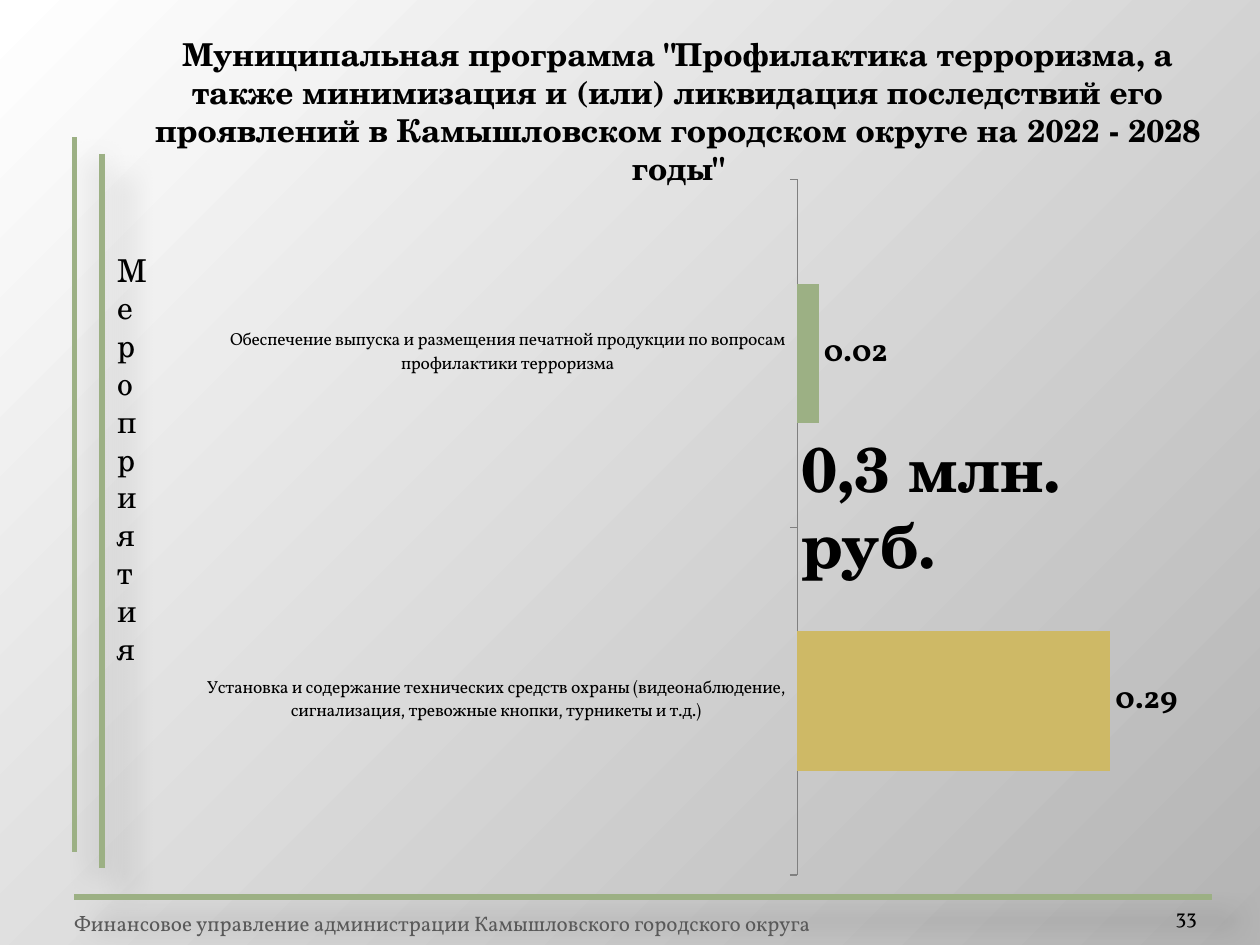
"""Builds the slide on the municipal anti-terrorism programme with its cost chart."""
from typing import NamedTuple

from lxml import etree
from pptx import Presentation
from pptx.chart.data import CategoryChartData
from pptx.dml.color import RGBColor
from pptx.enum.chart import XL_CHART_TYPE, XL_LABEL_POSITION, XL_TICK_MARK
from pptx.enum.shapes import MSO_CONNECTOR
from pptx.enum.text import MSO_ANCHOR, MSO_AUTO_SIZE, PP_ALIGN
from pptx.oxml import parse_xml
from pptx.oxml.ns import qn
from pptx.util import Pt

BAR = XL_CHART_TYPE.BAR_CLUSTERED
OUTSIDE_END = XL_LABEL_POSITION.OUTSIDE_END
TICK_OUTSIDE = XL_TICK_MARK.OUTSIDE
STRAIGHT = MSO_CONNECTOR.STRAIGHT
TOP, BOTTOM = MSO_ANCHOR.TOP, MSO_ANCHOR.BOTTOM
GROW, FIXED = MSO_AUTO_SIZE.SHAPE_TO_FIT_TEXT, MSO_AUTO_SIZE.NONE
LEFT, CENTER, RIGHT = PP_ALIGN.LEFT, PP_ALIGN.CENTER, PP_ALIGN.RIGHT

COLORS = {
    "light": "FFFFFF",
    "dark": "B4B4B4",
    "green": "9CB084",
    "gold": "CEB966",
    "footer": "595959",
    "axis": "808080",
    "text": "000000",
}
HEADING_FONT = "TeX Gyre Schola"
BODY_FONT = "Vollkorn"
VALUE_FORMAT = "#,##0.00"
DRAWING = "http://schemas.openxmlformats.org/drawingml/2006/main"
CHART = "http://schemas.openxmlformats.org/drawingml/2006/chart"


class Rule(NamedTuple):
    x1: float
    y1: float
    x2: float
    y2: float


class Activity(NamedTuple):
    name: str
    cost: float
    color: str


RULES = [
    Rule(42.5, 78.5, 42.5, 486.7),
    Rule(58.3, 87.8, 58.3, 496),
    Rule(42.5, 512.6, 692.6, 512.6),
]
ACTIVITIES = [
    Activity(
        "Установка и содержание технических средств охраны (видеонаблюдение, "
        "сигнализация, тревожные кнопки, турникеты и т.д.)", 0.29, "gold"),
    Activity(
        "Обеспечение выпуска и размещения печатной продукции по вопросам "
        "профилактики терроризма", 0.02, "green"),
]
PLOT_AREA = {"x": 0.61, "y": 0.02, "w": 0.37, "h": 0.96}


def color(name: str) -> RGBColor:
    return RGBColor.from_string(COLORS[name])


def paint_background(page) -> None:
    fill = page.background.fill
    fill.gradient()
    for stop, name in zip(fill.gradient_stops, ("light", "dark")):
        stop.color.rgb = color(name)
    linear = next(page.element.iter(qn("a:lin")))
    linear.getparent().replace(linear, parse_xml(
        f'<a:path xmlns:a="{DRAWING}" path="circle">'
        '<a:fillToRect r="100000" b="100000"/></a:path>'))


def draw_rule(page, rule: Rule) -> None:
    line = page.shapes.add_connector(STRAIGHT, *map(Pt, rule))
    line.line.color.rgb = color("green")
    line.line.width = Pt(3)
    line.element.spPr.append(parse_xml(
        f'<a:effectLst xmlns:a="{DRAWING}">'
        f'<a:outerShdw blurRad="{Pt(15)}" dist="{Pt(18)}" dir="2700000" algn="tl" rotWithShape="0">'
        f'<a:srgbClr val="{COLORS["text"]}"><a:alpha val="26000"/></a:srgbClr>'
        '</a:outerShdw></a:effectLst>'))


def write(box, text: str, *, size: float, font: str = HEADING_FONT, ink: str = "text",
          bold: bool = False, align=LEFT, anchor=TOP, fit=GROW) -> None:
    frame = box.text_frame
    frame.word_wrap = True
    frame.auto_size = fit
    frame.vertical_anchor = anchor
    para = frame.paragraphs[0]
    para.alignment = align
    span = para.add_run()
    span.text = text
    span.font.name = font
    span.font.size = Pt(size)
    span.font.bold = bold
    span.font.color.rgb = color(ink)


def add_box(page, left: float, top: float, width: float, height: float):
    return page.shapes.add_textbox(Pt(left), Pt(top), Pt(width), Pt(height))


def add_title(page) -> None:
    title = page.shapes.title
    title.left, title.top, title.width, title.height = Pt(78.5), Pt(16.6), Pt(617.8), Pt(72.7)
    write(title, 'Муниципальная программа "Профилактика терроризма, а также минимизация '
          'и (или) ликвидация последствий его проявлений в Камышловском городском округе '
          'на 2022 - 2028 годы"', size=18, bold=True, align=CENTER)


def set_plot_area(chart) -> None:
    plot_area = chart.element.chart.plotArea
    for old in plot_area.findall(qn("c:layout")):
        plot_area.remove(old)
    layout = etree.Element(qn("c:layout"), nsmap={"c": CHART})
    manual = etree.SubElement(layout, qn("c:manualLayout"))
    settings = {"layoutTarget": "inner", "xMode": "edge", "yMode": "edge", **PLOT_AREA}
    for name, value in settings.items():
        etree.SubElement(manual, qn(f"c:{name}")).set("val", str(value))
    plot_area.insert(0, layout)


def add_cost_chart(page, activities: list[Activity]) -> None:
    data = CategoryChartData(number_format=VALUE_FORMAT)
    data.categories = [activity.name for activity in activities]
    data.add_series("Series 1", [activity.cost for activity in activities])
    chart = page.shapes.add_chart(BAR, Pt(99.4), Pt(94.3), Pt(583.9), Pt(414), data).chart
    chart.has_legend = False
    chart.has_title = False
    chart.font.name = BODY_FONT
    chart.font.size = Pt(10)
    chart.font.color.rgb = color("text")
    set_plot_area(chart)

    costs = chart.value_axis
    costs.minimum_scale, costs.maximum_scale = 0, 0.35
    costs.has_major_gridlines = False
    costs.tick_labels.number_format = VALUE_FORMAT
    costs.tick_labels.number_format_is_linked = False
    costs.visible = False
    names = chart.category_axis
    names.major_tick_mark = TICK_OUTSIDE
    names.format.line.color.rgb = color("axis")
    names.format.line.width = Pt(0.75)

    plot = chart.plots[0]
    plot.gap_width = 150
    plot.vary_by_categories = False
    series = plot.series[0]
    for index, activity in enumerate(activities):
        fill = series.points[index].format.fill
        fill.solid()
        fill.fore_color.rgb = color(activity.color)
    labels = series.data_labels
    labels.show_value = True
    labels.position = OUTSIDE_END
    labels.number_format = VALUE_FORMAT
    labels.number_format_is_linked = False
    labels.font.name = BODY_FONT
    labels.font.size = Pt(18)
    labels.font.bold = True
    labels.font.color.rgb = color("text")


def main() -> None:
    deck = Presentation()
    deck.slide_width, deck.slide_height = Pt(720), Pt(540)
    page = deck.slides.add_slide(deck.slide_layouts[5])
    paint_background(page)
    for rule in RULES:
        draw_rule(page, rule)

    write(add_box(page, 35.3, 517, 657.4, 21.6),
          "Финансовое управление администрации Камышловского городского округа",
          size=12, font=BODY_FONT, ink="footer")
    number = add_box(page, 624.2, 505.4, 59.8, 28.8)
    number.text_frame.margin_left = number.text_frame.margin_right = 0
    write(number, "33", size=12, font=BODY_FONT, align=RIGHT, anchor=BOTTOM, fit=FIXED)

    add_title(page)
    side_label = add_box(page, 59.8, 139.7, 38.2, 334.8)
    write(side_label, "Мероприятия", size=18)
    side_label.element.txBody.bodyPr.set("vert", "wordArtVert")
    write(add_box(page, 450.7, 241.9, 241.9, 51.1), "0,3 млн. руб.", size=36, bold=True)
    add_cost_chart(page, ACTIVITIES)
    deck.save("out.pptx")


if __name__ == "__main__":
    main()
